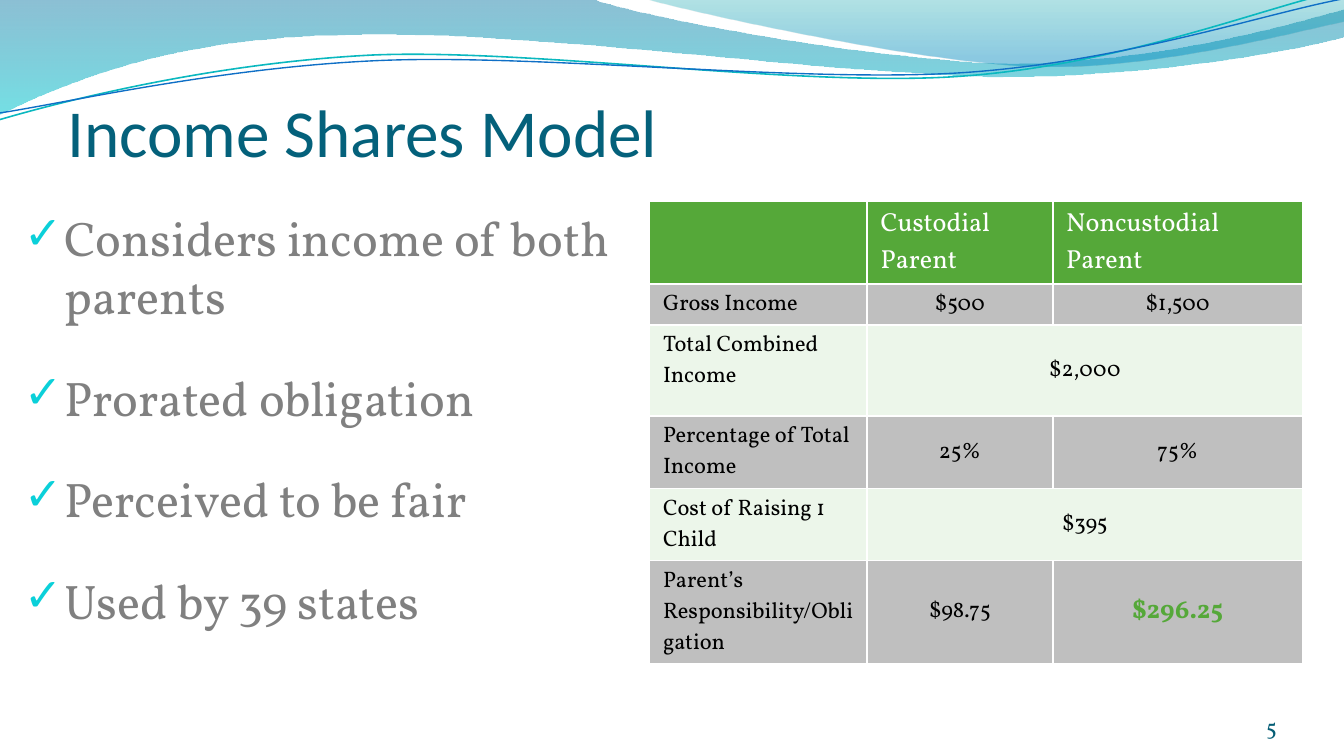
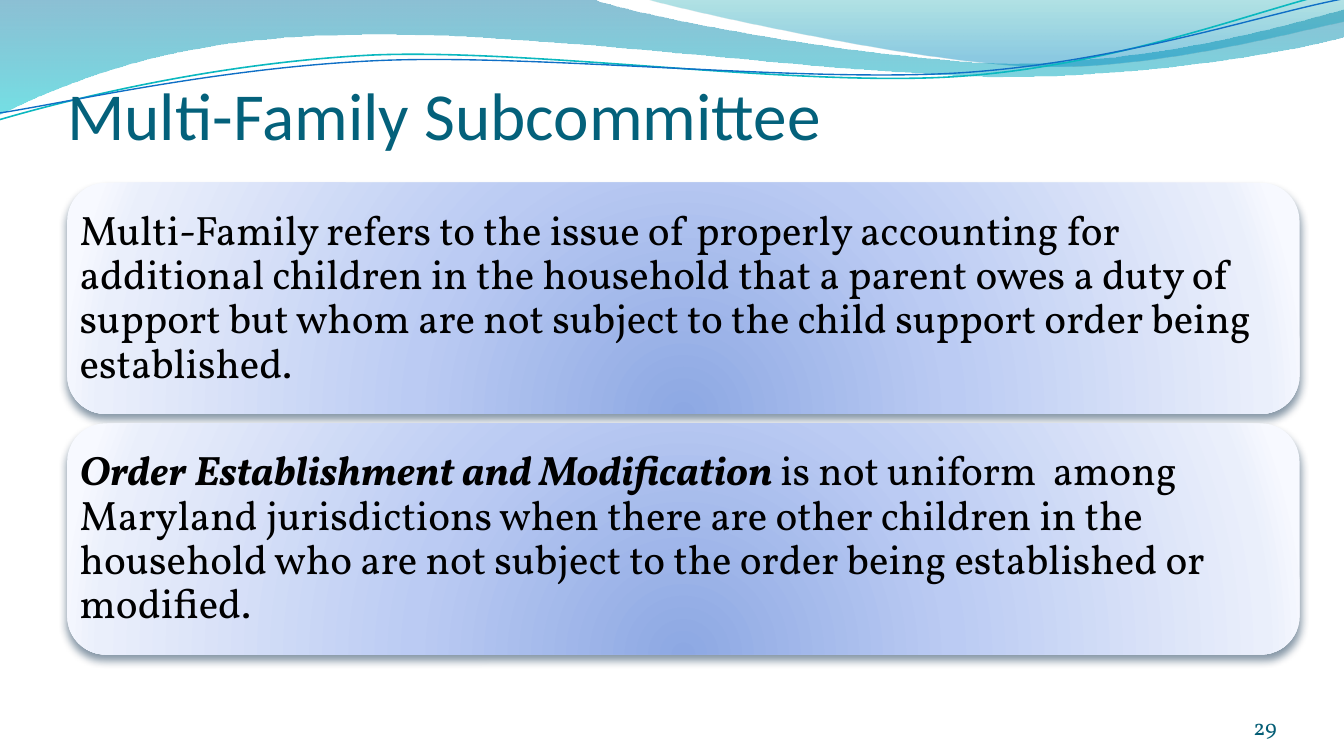
import pptx
import pptx.dml.color
import pptx.enum.shapes
import pptx.enum.text
import pptx.oxml
import pptx.oxml.ns
import pptx.util

RGB = pptx.dml.color.RGBColor
ALIGN = pptx.enum.text.PP_ALIGN
ANCHOR = pptx.enum.text.MSO_ANCHOR
Pt = pptx.util.Pt
qn = pptx.oxml.ns.qn

WHITE = RGB(0xFF, 0xFF, 0xFF)
BLACK = RGB(0x00, 0x00, 0x00)
GRAY = RGB(0x80, 0x80, 0x80)
TITLE_TEAL = RGB(0x04, 0x61, 0x7B)
NUMBER_TEAL = RGB(0x04, 0x5D, 0x75)
CHECK_CYAN = RGB(0x0B, 0xD0, 0xD9)
LINE_TEAL = RGB(0x0A, 0xB8, 0xBF)
LINE_BLUE = RGB(0x0F, 0x6F, 0xC6)
GREEN = RGB(0x55, 0xA8, 0x39)
SILVER = RGB(0xBF, 0xBF, 0xBF)
MINT = RGB(0xEC, 0xF6, 0xEA)
SHADOW_NAVY = RGB(0x04, 0x27, 0x47)

WAVE_STOPS = [(0, RGB(0x00, 0x74, 0xA1), 45), (100, RGB(0x00, 0xC6, 0xCF), 55)]
CREST_STOPS = [(0, RGB(0x00, 0xA1, 0xA9), 30), (80, RGB(0x00, 0x8B, 0xBF), 45)]
CARD_STOPS = [(0, RGB(0x8D, 0xA8, 0xE3), 100), (43, RGB(0xBB, 0xCB, 0xF3), 100),
              (93, RGB(0xEA, 0xEF, 0xFB), 100), (100, RGB(0xF7, 0xF9, 0xFF), 100)]
DOWNWARD = '<a:lin ang="5400000" scaled="0"/>'
RADIAL = ('<a:path path="circle"><a:fillToRect l="50000" t="130000" '
          'r="50000" b="-30000"/></a:path>')

WAVE = [(0, 0), (44, -0.1), (47.6, 1.3, 66.4, 4.7, 75.8, 4.7),
        (85.3, 4.7, 95.8, 1.9, 100, 0.7), (100.1, 2.7),
        (98.3, 3.3, 87, 5.7, 74.6, 5.7), (62.2, 5.6, 38.2, 2.1, 25.7, 2.6),
        (12.9, 2.7, 4.6, 6.2, -0.1, 8.5), (0, 0)]
CREST = [(47.9, -0.1), (50.9, 0.8, 68.2, 4.6, 76.9, 4.9),
         (85.6, 5.2, 96.1, 2.4, 100, 1.6), (100, 0), (47.9, -0.1)]
TEAL_CURVE = [(0, 8.9), (4.8, 7.5, 15.8, 4.7, 27.7, 4.1),
              (39.6, 3.6, 59.2, 6.5, 71.2, 5.7), (83.3, 4.9, 93.9, 0.6, 99.8, -0.7)]
BLUE_CURVE = [(0, 8.4), (4.7, 7.7, 16.4, 5, 28.3, 4.5),
              (40.3, 4, 59.7, 6.2, 71.7, 5.4), (83.6, 4.6, 94.1, 1, 100, -0.1)]

TITLE_FONT = "Calibri"
BODY_FONT = "Vollkorn"
COLUMNS, ROWS = 100, 56.25


def xml(markup):
    root = pptx.oxml.parse_xml(f'<a:root {pptx.oxml.ns.nsdecls("a")}>{markup}</a:root>')
    return root[0]


class Deck:
    def __init__(self):
        self.prs = pptx.Presentation()
        self.prs.slide_width = pptx.util.Inches(10)
        self.prs.slide_height = pptx.util.Inches(5.625)
        self.s = None

    def x(self, columns):
        return round(columns * self.prs.slide_width / COLUMNS)

    def y(self, rows):
        return round(rows * self.prs.slide_height / ROWS)

    def box(self, left, top, width, height):
        return self.x(left), self.y(top), self.x(width), self.y(height)

    def slide(self, title, number, top, height):
        self.s = self.prs.slides.add_slide(self.prs.slide_layouts[6])
        self.wave(WAVE, stops=WAVE_STOPS)
        self.wave(CREST, stops=CREST_STOPS)
        self.wave(TEAL_CURVE, color=LINE_TEAL, weight=0.85)
        self.wave(BLUE_CURVE, color=LINE_BLUE, weight=0.75)
        tf = self.text_box(5, top, 90, height, (0, 0.5, 0, 0), ANCHOR.BOTTOM)
        self.run(tf.paragraphs[0], title, 36, TITLE_TEAL, TITLE_FONT)
        tf = self.text_box(86.7, 52.1, 8.3, 3, (0, 0, 0, 0), ANCHOR.BOTTOM)
        p = tf.paragraphs[0]
        p.alignment = ALIGN.RIGHT
        self.run(p, str(number), 12, NUMBER_TEAL)

    def run(self, p, text, size, color, font=BODY_FONT, bold=False, italic=False):
        r = p.add_run()
        r.text = text
        r.font.name = font
        r.font.size = Pt(size)
        r.font.color.rgb = color
        r.font.bold = bold
        r.font.italic = italic

    def frame(self, tf, insets, anchor):
        tf.word_wrap = True
        tf.vertical_anchor = anchor
        tf.margin_left, tf.margin_right = self.x(insets[0]), self.x(insets[2])
        tf.margin_top, tf.margin_bottom = self.y(insets[1]), self.y(insets[3])
        return tf

    def text_box(self, left, top, width, height, insets, anchor=ANCHOR.TOP):
        sp = self.s.shapes.add_textbox(*self.box(left, top, width, height))
        return self.frame(sp.text_frame, insets, anchor)

    def gradient(self, sp, stops, direction):
        sp.fill.solid()
        marks = "".join(
            f'<a:gs pos="{pos * 1000}"><a:srgbClr val="{color}">'
            f'<a:alpha val="{alpha * 1000}"/></a:srgbClr></a:gs>'
            for pos, color, alpha in stops)
        fill = xml(f'<a:gradFill rotWithShape="1"><a:gsLst>{marks}</a:gsLst>'
                   f'{direction}</a:gradFill>')
        spPr = sp.element.spPr
        spPr.replace(spPr.find(qn("a:solidFill")), fill)

    def wave(self, outline, stops=None, color=None, weight=0):
        points = [(self.x(seg[i]), self.y(seg[i + 1]))
                  for seg in outline for i in range(0, len(seg), 2)]
        fb = self.s.shapes.build_freeform(*points[0])
        fb.add_line_segments(points[1:], close=stops is not None)
        sp = fb.convert_to_shape()
        legs = iter(list(sp.element.spPr.iter(qn("a:lnTo"))))
        for segment in outline[1:]:
            group = [next(legs) for _ in range(len(segment) // 2)]
            if len(group) == 3:
                curve = xml("<a:cubicBezTo/>")
                group[0].addprevious(curve)
                for leg in group:
                    curve.append(leg[0])
                    leg.getparent().remove(leg)
        sp.shadow.inherit = False
        if stops:
            self.gradient(sp, stops, DOWNWARD)
            sp.line.fill.background()
        else:
            sp.fill.background()
            sp.line.color.rgb = color
            sp.line.width = Pt(weight)

    def checklist(self, left, top, width, height, items):
        tf = self.text_box(left, top, width, height, (1, 0.5, 1, 0.5))
        for i, item in enumerate(items):
            p = tf.add_paragraph() if i else tf.paragraphs[0]
            p.line_spacing = 1.0
            p.space_before = Pt(5.2)
            p.space_after = Pt(18)
            self.run(p, item, 26, GRAY)
            pPr = p._p.get_or_add_pPr()
            pPr.set("marL", str(self.x(3)))
            pPr.set("indent", str(self.x(-3)))
            for bullet in (f'<a:buClr><a:srgbClr val="{CHECK_CYAN}"/></a:buClr>',
                           '<a:buSzPct val="95000"/>',
                           f'<a:buFont typeface="{BODY_FONT}"/>',
                           '<a:buChar char="✓"/>'):
                pPr.append(xml(bullet))

    def card(self, left, top, width, height, runs):
        sp = self.s.shapes.add_shape(pptx.enum.shapes.MSO_SHAPE.ROUNDED_RECTANGLE,
                                     *self.box(left, top, width, height))
        self.gradient(sp, CARD_STOPS, RADIAL)
        sp.line.fill.background()
        sp.shadow.inherit = False
        sp.element.spPr.find(qn("a:effectLst")).append(xml(
            f'<a:outerShdw blurRad="{Pt(4.5)}" dist="{Pt(3)}" dir="5400000" '
            f'rotWithShape="0"><a:srgbClr val="{SHADOW_NAVY}">'
            '<a:alpha val="48000"/></a:srgbClr></a:outerShdw>'))
        tf = self.frame(sp.text_frame, (0.1, 0.1, 0.1, 0.1), ANCHOR.MIDDLE)
        p = tf.paragraphs[0]
        p.alignment = ALIGN.LEFT
        p.line_spacing = 0.9
        p.space_after = Pt(7.7)
        for text, strong in runs:
            self.run(p, text, 22, BLACK, bold=strong, italic=strong)

    def cell(self, cell, text, fill, size, color, centered=False, bold=False):
        cell.fill.solid()
        cell.fill.fore_color.rgb = fill
        cell.margin_left = cell.margin_right = self.x(1)
        cell.margin_top = cell.margin_bottom = self.y(0.4)
        tcPr = cell._tc.get_or_add_tcPr()
        for i, side in enumerate("LRTB"):
            tcPr.insert(i, xml(f'<a:ln{side} w="{Pt(1)}"><a:solidFill>'
                               f'<a:srgbClr val="{WHITE}"/></a:solidFill></a:ln{side}>'))
        if text:
            p = cell.text_frame.paragraphs[0]
            self.run(p, text, size, color, bold=bold)
            if centered:
                p.alignment = ALIGN.CENTER
                cell.vertical_anchor = ANCHOR.MIDDLE

    def table(self, left, top, widths, heights, header, rows, highlight):
        tbl = self.s.shapes.add_table(
            len(heights), len(widths),
            *self.box(left, top, sum(widths), sum(heights))).table
        for column, width in zip(tbl.columns, widths):
            column.width = self.x(width)
        for row, height in zip(tbl.rows, heights):
            row.height = self.y(height)
        for j, text in enumerate(header):
            self.cell(tbl.cell(0, j), text, GREEN, 14, WHITE)
        for i, row in enumerate(rows, 1):
            for j in range(len(widths)):
                text = row[j] if j < len(row) else ""
                special = text == highlight
                self.cell(tbl.cell(i, j), text, SILVER if i % 2 else MINT,
                          14 if special else 12, GREEN if special else BLACK,
                          centered=j > 0, bold=special)
            if len(row) < len(widths):
                tbl.cell(i, len(row) - 1).merge(tbl.cell(i, len(widths) - 1))


def main():
    deck = Deck()

    deck.slide("Income Shares Model", 5, 6.5, 6.2)
    deck.checklist(0.8, 15, 46.3, 39.4, [
        "Considers income of both parents",
        "Prorated obligation",
        "Perceived to be fair",
        "Used by 39 states",
    ])
    deck.table(48.33, 15, [16.2, 13.8, 18.6], [6.15, 3.03, 6.78, 5.4, 5.35, 7.7],
               ["", "Custodial Parent", "Noncustodial Parent"], [
                   ["Gross Income", "$500", "$1,500"],
                   ["Total Combined Income", "$2,000"],
                   ["Percentage of Total Income", "25%", "75%"],
                   ["Cost of Raising 1 Child", "$395"],
                   ["Parent’s Responsibility/Obligation", "$98.75", "$296.25"],
               ], highlight="$296.25")

    deck.slide("Multi-Family Subcommittee", 29, 5.75, 5.7)
    cards = [
        [("Multi-Family refers to the issue of properly accounting for additional "
          "children in the household that a parent owes a duty of support but whom "
          "are not subject to the child support order being established.", False)],
        [("Order Establishment and Modification ", True),
         ("is not uniform  among Maryland jurisdictions when there are other children "
          "in the household who are not subject to the order being established or "
          "modified.", False)],
    ]
    for i, runs in enumerate(cards):
        deck.card(5, 13.6 + 17.9 * i, 91.7, 17.2, runs)

    deck.prs.save("out.pptx")


if __name__ == "__main__":
    main()
